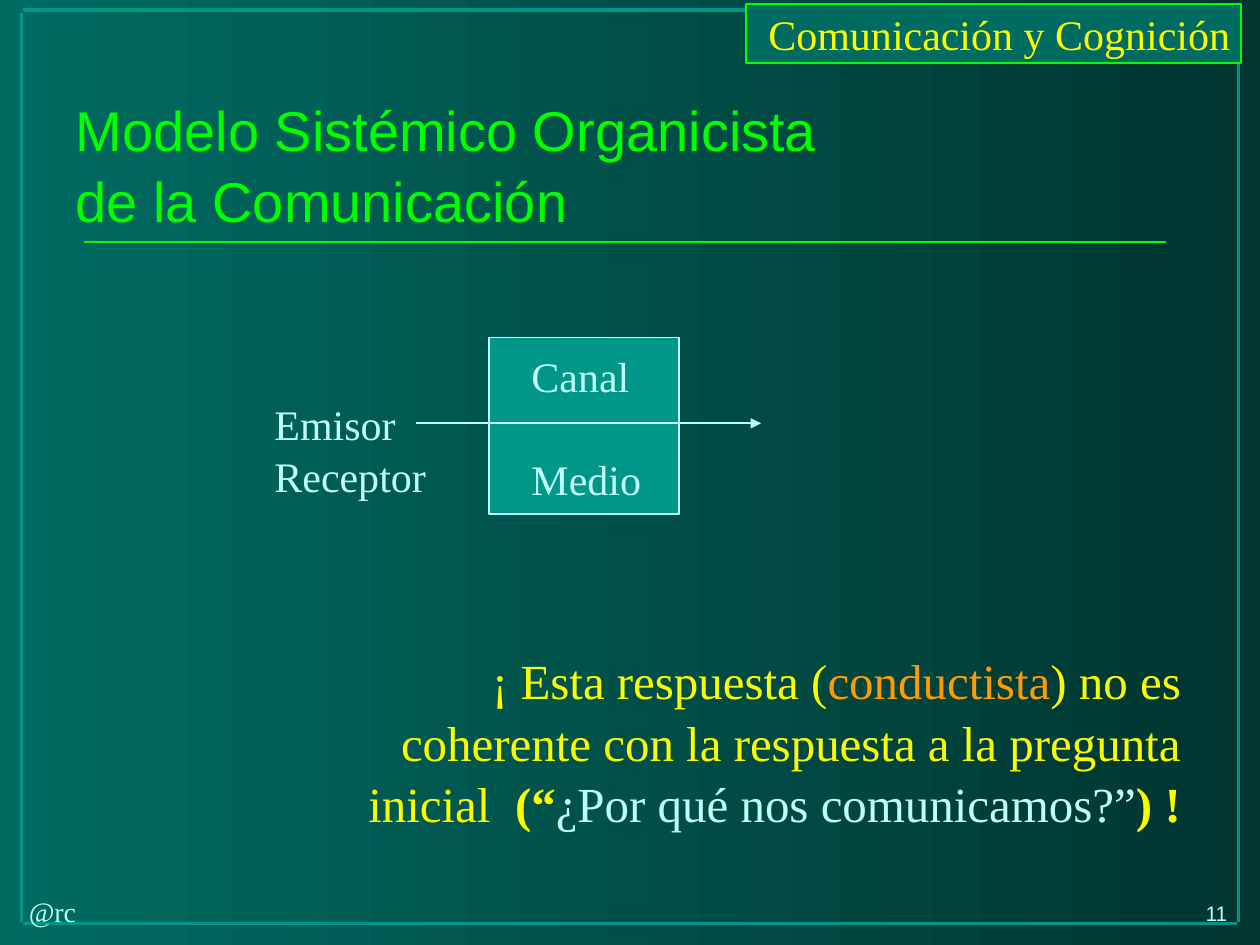
from pptx import Presentation
from pptx.dml.color import RGBColor
from pptx.enum.shapes import MSO_CONNECTOR, MSO_SHAPE
from pptx.enum.text import MSO_ANCHOR, PP_ALIGN
from pptx.oxml.ns import qn
from pptx.util import Inches, Pt
from lxml.etree import SubElement

DEEP = RGBColor(0x00, 0x6B, 0x61)
DARK = RGBColor(0x00, 0x35, 0x30)
TEAL = RGBColor(0x00, 0x96, 0x88)
PALE = RGBColor(0xC0, 0xFE, 0xF9)
GREEN = RGBColor(0x00, 0xFF, 0x00)
YELLOW = RGBColor(0xFA, 0xFD, 0x00)
ORANGE = RGBColor(0xFE, 0x9B, 0x03)
SERIF = "Times New Roman"

deck = Presentation()
deck.slide_width, deck.slide_height = Inches(10), Inches(7.5)
slide = deck.slides.add_slide(deck.slide_layouts[5])
shapes = slide.shapes

back = slide.background.fill
back.gradient()
back.gradient_angle = 0
for stop, color in zip(back.gradient_stops, (DEEP, DARK)):
    stop.color.rgb = color


def add_line(x1, y1, x2, y2, color, width):
    line = shapes.add_connector(MSO_CONNECTOR.STRAIGHT, Inches(x1), Inches(y1), Inches(x2), Inches(y2))
    line.line.color.rgb = color
    line.line.width = Pt(width)
    SubElement(line._element.spPr, qn("a:effectLst"))
    return line


def add_text(x, y, w, h, text, size, color=PALE, font=SERIF, wrap=False):
    frame = shapes.add_textbox(Inches(x), Inches(y), Inches(w), Inches(h)).text_frame
    frame.word_wrap = wrap
    frame.text = text
    for para in frame.paragraphs:
        para.line_spacing = 1.05
        for run in para.runs:
            run.font.size, run.font.name = Pt(size), font
            run.font.color.rgb = color
    return frame


add_text(9.47, 7.09, 0.49, 0.3, "11", 12, font="Arial")

for ends in (
    (0.17, 0.1, 0.17, 7.32),
    (0.18, 7.33, 9.82, 7.33),
    (0.18, 0.08, 9.82, 0.08),
    (9.83, 0.1, 9.83, 7.32),
):
    add_line(*ends, TEAL, 2)

add_text(0.13, 7.04, 0.58, 0.36, "@rc", 16)

for x, y, w, h, fill, edge in (
    (5.92, 0.03, 3.93, 0.47, DEEP, GREEN),
    (3.88, 2.68, 1.51, 1.4, TEAL, PALE),
):
    box = shapes.add_shape(MSO_SHAPE.RECTANGLE, Inches(x), Inches(y), Inches(w), Inches(h))
    box.shadow.inherit = False
    box.fill.solid()
    box.fill.fore_color.rgb = fill
    box.line.color.rgb = edge
    box.line.width = Pt(1)

add_text(6, 0, 4.04, 0.5, "Comunicación y Cognición", 24, YELLOW, wrap=True)

claim = add_text(2.33, 5.09, 7.14, 1.5, "", 28, wrap=True).paragraphs[0]
claim.alignment = PP_ALIGN.RIGHT
for text, color, bold in (
    ("¡ Esta respuesta (", YELLOW, False),
    ("conductista", ORANGE, False),
    (") no es coherente con la respuesta a la pregunta inicial", YELLOW, False),
    ("  (“", YELLOW, True),
    ("¿Por qué nos comunicamos?”", PALE, False),
    (") !", YELLOW, True),
):
    run = claim.add_run()
    run.text = text
    run.font.size, run.font.name, run.font.bold = Pt(28), SERIF, bold
    run.font.color.rgb = color

add_text(2.08, 3.09, 1.5, 0.9, "Emisor\nReceptor", 24)
media = add_text(4.12, 2.71, 1.07, 1.3, "Canal\nMedio", 24)
media.paragraphs[1].space_before = Pt(29)

arrow = add_line(3.3, 3.36, 6.04, 3.36, PALE, 1)
SubElement(arrow.line._get_or_add_ln(), qn("a:tailEnd"), type="triangle")

title = shapes.title
title.left, title.top = Inches(0.5), Inches(0.67)
title.width, title.height = Inches(8.92), Inches(1.25)
title.text_frame.text = "Modelo Sistémico Organicista\vde la Comunicación"
title.text_frame.vertical_anchor = MSO_ANCHOR.MIDDLE
head = title.text_frame.paragraphs[0]
head.alignment = PP_ALIGN.LEFT
head.line_spacing = 1.05
for run in head.runs:
    run.font.size, run.font.name = Pt(32), "Arial"
    run.font.color.rgb = GREEN

add_line(0.67, 1.92, 9.25, 1.92, GREEN, 1)

deck.save("out.pptx")
